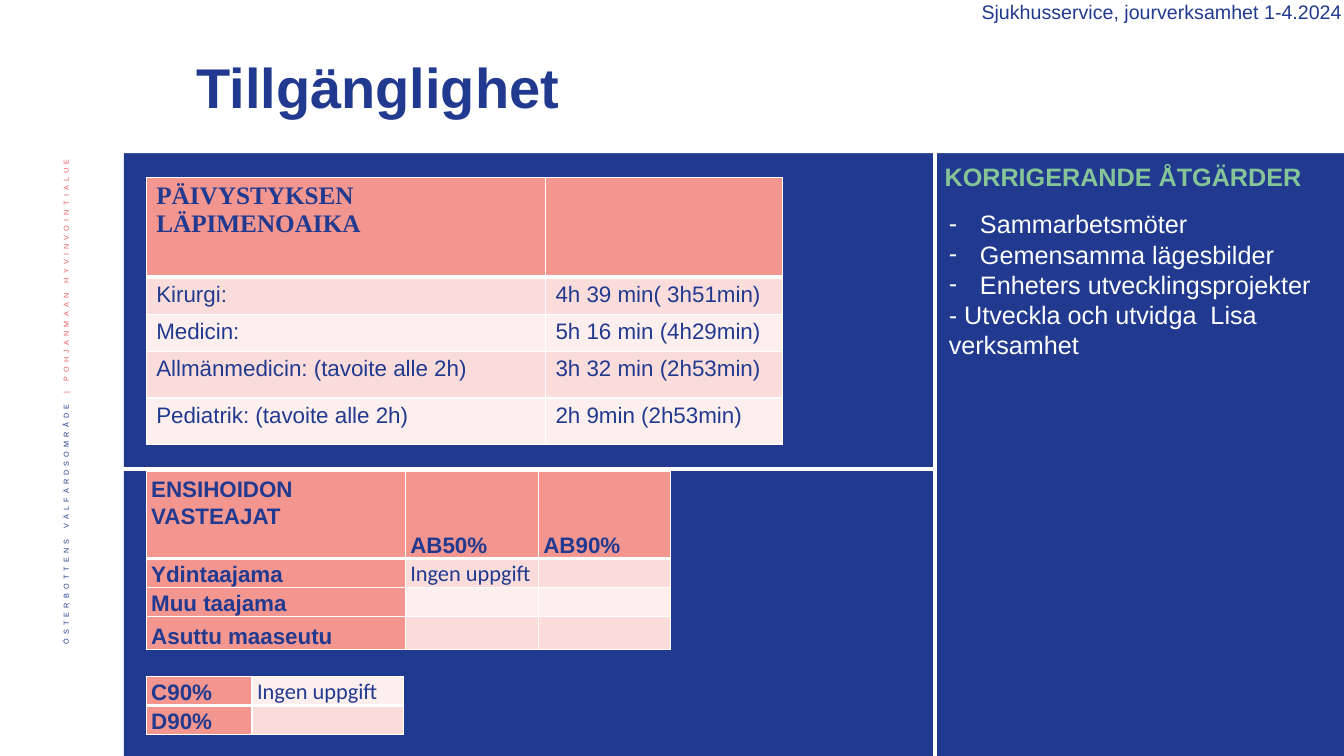
import pptx
import pptx.util
import pptx.dml.color
import pptx.enum.shapes
import pptx.enum.text
import pptx.oxml
import pptx.oxml.ns
from pptx.util import Inches, Pt

RGBColor = pptx.dml.color.RGBColor
PP_ALIGN = pptx.enum.text.PP_ALIGN
MSO_ANCHOR = pptx.enum.text.MSO_ANCHOR
NAVY = RGBColor(0x21, 0x3A, 0x8F)
WHITE = RGBColor(0xFF, 0xFF, 0xFF)
RED = RGBColor(0xEB, 0x5C, 0x5F)
GREEN = RGBColor(0x85, 0xC5, 0x98)
SALMON = RGBColor(0xF3, 0x96, 0x90)
PINK = RGBColor(0xFA, 0xDD, 0xDB)
PALE = RGBColor(0xFD, 0xEF, 0xEE)
NAMESPACE = pptx.oxml.ns.nsdecls("a")


def style(paragraph, size, color, bold=False, name="Arial"):
    for run in paragraph.runs:
        run.font.size = Pt(size)
        run.font.name = name
        run.font.bold = bold
        run.font.color.rgb = color


def add_grid(left, top, widths, heights, rows, compact):
    frame = slide.shapes.add_table(len(rows), len(widths), Inches(left), Inches(top),
                                   Inches(sum(widths)), Inches(sum(heights)))
    table = frame.table
    for column, width in zip(table.columns, widths):
        column.width = Inches(width)
    for row, height in zip(table.rows, heights):
        row.height = Inches(height)
    for r, texts in enumerate(rows):
        for c, text in enumerate(texts):
            cell = table.cell(r, c)
            properties = cell._tc.get_or_add_tcPr()
            edges = {"L": 1, "R": 1, "T": 3 if r == 1 else 1, "B": 3 if r == 0 else 1}
            for edge, points in edges.items():
                properties.append(pptx.oxml.parse_xml(
                    f'<a:ln{edge} {NAMESPACE} w="{Pt(points)}"><a:solidFill>'
                    f'<a:srgbClr val="{WHITE}"/></a:solidFill></a:ln{edge}>'))
            heading = (r == 0 and len(rows) > 2) or (compact and c == 0)
            cell.fill.solid()
            cell.fill.fore_color.rgb = SALMON if heading else PINK if r % 2 else PALE
            paragraph = cell.text_frame.paragraphs[0]
            paragraph.text = text
            if compact:
                cell.vertical_anchor = MSO_ANCHOR.BOTTOM
                cell.margin_left = cell.margin_right = Inches(0.05)
                cell.margin_top = cell.margin_bottom = 0
                paragraph.line_spacing = 1.07
                style(paragraph, 16, NAVY, heading, "Arial" if heading else "Calibri")
            elif heading:
                style(paragraph, 18, NAVY, True, "Times New Roman")
            else:
                style(paragraph, 16, NAVY)
            if not text:
                paragraph._p.get_or_add_endParaRPr().set("sz", "1400")
    return table


presentation = pptx.Presentation()
presentation.slide_width = Inches(13.33)
presentation.slide_height = Inches(7.5)
slide = presentation.slides.add_slide(presentation.slide_layouts[1])
title, actions = slide.placeholders

for left, top, width, height, color in [
    (1.23, 0, 12.1, 7.5, NAVY),
    (1.15, 0, 12.18, 1.52, WHITE),
]:
    panel = slide.shapes.add_shape(pptx.enum.shapes.MSO_SHAPE.RECTANGLE, Inches(left),
                                   Inches(top), Inches(width), Inches(height))
    panel.shadow.inherit = False
    panel.fill.solid()
    panel.fill.fore_color.rgb = color
    panel.line.fill.background()

for x1, y1, x2, y2 in [(9.27, 1.47, 9.27, 7.5), (1.21, 4.65, 9.27, 4.65)]:
    divider = slide.shapes.add_connector(pptx.enum.shapes.MSO_CONNECTOR.STRAIGHT,
                                         Inches(x1), Inches(y1), Inches(x2), Inches(y2))
    divider.line.color.rgb = WHITE
    divider.line.width = Pt(3)
    divider._element.spPr.append(pptx.oxml.parse_xml(f"<a:effectLst {NAMESPACE}/>"))

side_label = slide.shapes.add_textbox(Inches(0.42), Inches(1.42), Inches(0.52), Inches(5.73))
side_label.text_frame.word_wrap = True
side_label.text_frame.vertical_anchor = MSO_ANCHOR.MIDDLE
side_label.text_frame._txBody.bodyPr.set("vert", "vert270")
paragraph = side_label.text_frame.paragraphs[0]
paragraph.alignment = PP_ALIGN.RIGHT
paragraph.line_spacing = 0.9
for text in ("ÖSTERBOTTENS VÄLFÄRDSOMRÅDE ", "| POHJANMAAN HYVINVOINTIALUE "):
    run = paragraph.add_run()
    run.text = text
    run._r.get_or_add_rPr().set("baseline", "30000")
    run._r.get_or_add_rPr().set("spc", "300")
style(paragraph, 9, NAVY)
paragraph.runs[1].font.color.rgb = RED

for placeholder, left, top, width, height in [
    (title, 1.85, 0.47, 10.2, 0.85),
    (actions, 9.31, 2.02, 4.02, 1.62),
]:
    slide.shapes._spTree.append(placeholder._element)
    placeholder.left, placeholder.top = Inches(left), Inches(top)
    placeholder.width, placeholder.height = Inches(width), Inches(height)
    placeholder.text_frame.auto_size = pptx.enum.text.MSO_AUTO_SIZE.NONE

title.text_frame.text = "Tillgänglighet"
title.text_frame.vertical_anchor = MSO_ANCHOR.MIDDLE
paragraph = title.text_frame.paragraphs[0]
paragraph.alignment = PP_ALIGN.LEFT
paragraph.line_spacing = 0.9
style(paragraph, 40, NAVY, True)

actions.text_frame.text = "\n".join([
    "Sammarbetsmöter",
    "Gemensamma lägesbilder",
    "Enheters utvecklingsprojekter",
    "- Utveckla och utvidga  Lisa verksamhet",
])
for index, paragraph in enumerate(actions.text_frame.paragraphs):
    bulleted = index < 3
    indent = Inches(0.31) if bulleted else 0
    properties = paragraph._p.get_or_add_pPr()
    properties.set("marL", str(indent))
    properties.set("indent", str(-indent))
    bullet = 'buChar char="-"' if bulleted else "buNone"
    properties.append(pptx.oxml.parse_xml(f"<a:{bullet} {NAMESPACE}/>".replace(
        f'buChar char="-" {NAMESPACE}', f'buChar {NAMESPACE} char="-"')))
    paragraph.space_before = Pt(0)
    style(paragraph, 18, WHITE)

for text, left, top, width, height, size, color, bold, alignment in [
    ("KORRIGERANDE ÅTGÄRDER", 9.27, 1.55, 3.95, 0.4, 18, GREEN, True, PP_ALIGN.LEFT),
    ("Sjukhusservice, jourverksamhet 1-4.2024", 7.46, -0.05, 5.95, 0.34, 14, NAVY, False,
     PP_ALIGN.RIGHT),
]:
    label = slide.shapes.add_textbox(Inches(left), Inches(top), Inches(width), Inches(height))
    label.text_frame.word_wrap = True
    label.text_frame.text = text
    paragraph = label.text_frame.paragraphs[0]
    paragraph.alignment = alignment
    style(paragraph, size, color, bold)

response_times = add_grid(1.45, 4.68, [2.57, 1.32, 1.31], [0.86, 0.28, 0.29, 0.33], [
    ["ENSIHOIDON VASTEAJAT", "AB50%", "AB90%"],
    ["Ydintaajama", "Ingen uppgift", ""],
    ["Muu taajama", "", ""],
    ["Asuttu maaseutu", "", ""],
], True)
response_times.cell(0, 0).vertical_anchor = MSO_ANCHOR.TOP
response_times.cell(0, 0).margin_top = Inches(0.04)

add_grid(1.45, 6.71, [1.05, 1.5], [0.29, 0.28], [
    ["C90%", "Ingen uppgift"],
    ["D90%", ""],
], True)

add_grid(1.45, 1.76, [3.96, 2.35], [0.99, 0.37, 0.37, 0.46, 0.46], [
    ["PÄIVYSTYKSEN LÄPIMENOAIKA", ""],
    ["Kirurgi:", "4h 39 min( 3h51min)"],
    ["Medicin:", "5h 16 min (4h29min)"],
    ["Allmänmedicin: (tavoite alle 2h)", "3h 32 min (2h53min)"],
    ["Pediatrik: (tavoite alle 2h)", "2h 9min (2h53min)"],
], False)

presentation.save("out.pptx")
